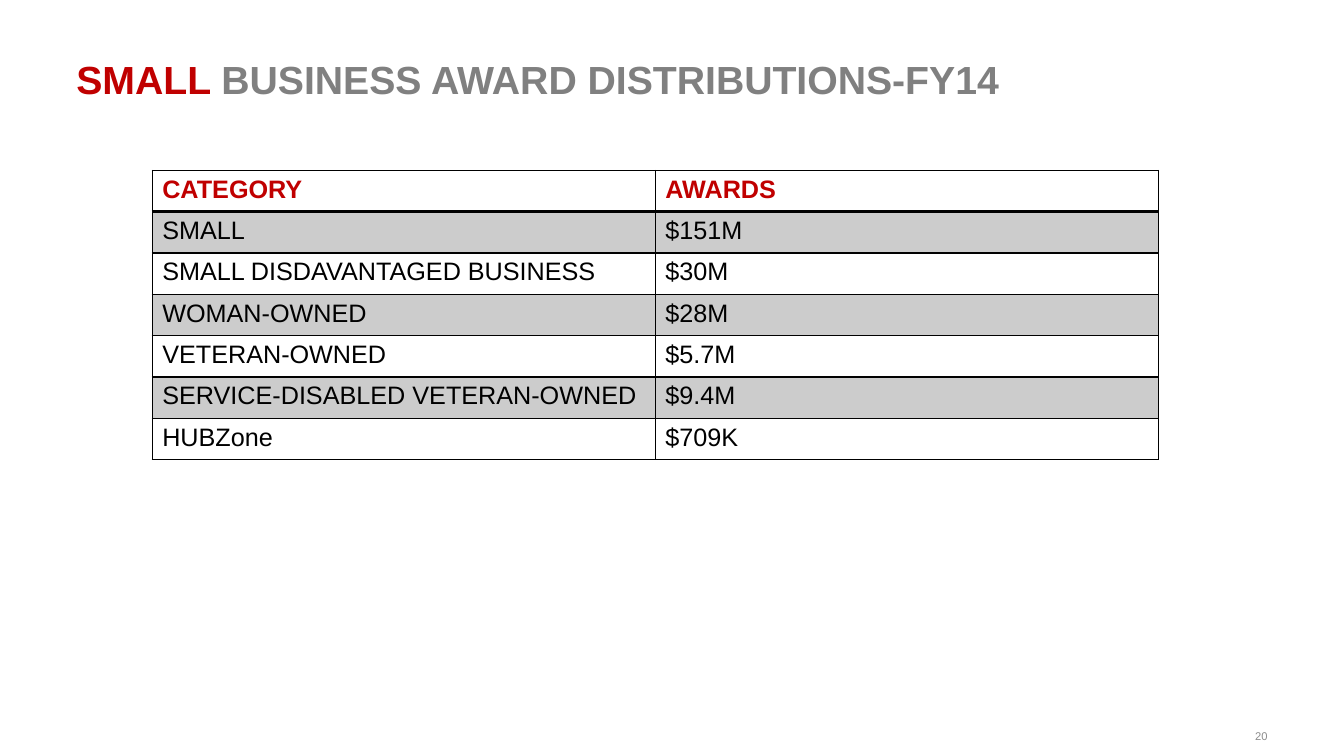
"""Build the small business award distributions slide."""
from dataclasses import dataclass

from lxml.etree import SubElement
from pptx import Presentation
from pptx.dml.color import RGBColor
from pptx.enum.text import MSO_ANCHOR, PP_ALIGN
from pptx.oxml.ns import qn
from pptx.util import Inches, Pt

HEADLINE = [("SMALL ", "accent"), ("BUSINESS AWARD DISTRIBUTIONS-FY14", "muted")]
AWARDS = [
    ("CATEGORY", "AWARDS"),
    ("SMALL", "$151M"),
    ("SMALL DISDAVANTAGED BUSINESS", "$30M"),
    ("WOMAN-OWNED", "$28M"),
    ("VETERAN-OWNED", "$5.7M"),
    ("SERVICE-DISABLED VETERAN-OWNED", "$9.4M"),
    ("HUBZone", "$709K"),
]
PAGE_NUMBER = "20"

HEADLINE_BOX = (0.66, 0.5, 12, 1.19)
PAGE_NUMBER_BOX = (10.82, 7.1, 1.85, 0.4)
TABLE_LEFT, TABLE_TOP = 1.51, 1.69
COLUMN_WIDTH, ROW_HEIGHT = 4.99, 0.41


@dataclass(frozen=True)
class Theme:
    """Colours, font and type sizes of the slide."""
    accent: str = "C00000"
    muted: str = "808080"
    faint: str = "8C8C8C"
    ink: str = "000000"
    band: str = "CCCCCC"
    font: str = "Arial"
    headline_size: int = 28
    table_size: int = 18
    page_size: int = 8


THEME = Theme()


def write_text(frame, runs, *, size, bold=False, align=PP_ALIGN.LEFT, anchor=MSO_ANCHOR.TOP):
    """Write (words, theme colour) runs as one paragraph."""
    frame.word_wrap = True
    frame.vertical_anchor = anchor
    paragraph = frame.paragraphs[0]
    paragraph.alignment = align
    for words, colour in runs:
        run = paragraph.add_run()
        run.text = words
        run.font.name = THEME.font
        run.font.size = Pt(size)
        run.font.bold = bold
        run.font.color.rgb = RGBColor.from_string(getattr(THEME, colour))


def add_text(slide, box, runs, **style):
    """Add a text box holding the given runs."""
    frame = slide.shapes.add_textbox(*map(Inches, box)).text_frame
    write_text(frame, runs, **style)


def draw_borders(cell, widths):
    """Give the four cell edges a solid line."""
    properties = cell._tc.get_or_add_tcPr()
    for edge, width in widths.items():
        line = SubElement(properties, qn(f"a:ln{edge}"), w=str(Pt(width)))
        fill = SubElement(line, qn("a:solidFill"))
        SubElement(fill, qn("a:srgbClr"), val=THEME.ink)


def add_awards(slide):
    """Add the awards table with a ruled header and banded rows."""
    column_count, row_count = len(AWARDS[0]), len(AWARDS)
    size = (COLUMN_WIDTH * column_count, ROW_HEIGHT * row_count)
    frame = slide.shapes.add_table(
        row_count, column_count, *map(Inches, (TABLE_LEFT, TABLE_TOP, *size)))
    table = frame.table
    for column in table.columns:
        column.width = Inches(COLUMN_WIDTH)
    for row_index, entries in enumerate(AWARDS):
        table.rows[row_index].height = Inches(ROW_HEIGHT)
        header = row_index == 0
        top = 2 if row_index == 1 else 1
        bottom = 2 if header else 1
        for column_index, entry in enumerate(entries):
            cell = table.cell(row_index, column_index)
            draw_borders(cell, {"L": 1, "R": 1, "T": top, "B": bottom})
            if row_index % 2:
                cell.fill.solid()
                cell.fill.fore_color.rgb = RGBColor.from_string(THEME.band)
            else:
                cell.fill.background()
            colour = "accent" if header else "ink"
            write_text(cell.text_frame, [(entry, colour)], size=THEME.table_size, bold=header)


def main():
    """Assemble and save the slide."""
    deck = Presentation()
    deck.slide_width, deck.slide_height = Inches(13.33), Inches(7.5)
    slide = deck.slides.add_slide(deck.slide_layouts[6])
    add_text(slide, PAGE_NUMBER_BOX, [(PAGE_NUMBER, "faint")], size=THEME.page_size,
             align=PP_ALIGN.RIGHT, anchor=MSO_ANCHOR.MIDDLE)
    add_text(slide, HEADLINE_BOX, HEADLINE, size=THEME.headline_size, bold=True)
    add_awards(slide)
    deck.save("out.pptx")


if __name__ == "__main__":
    main()
